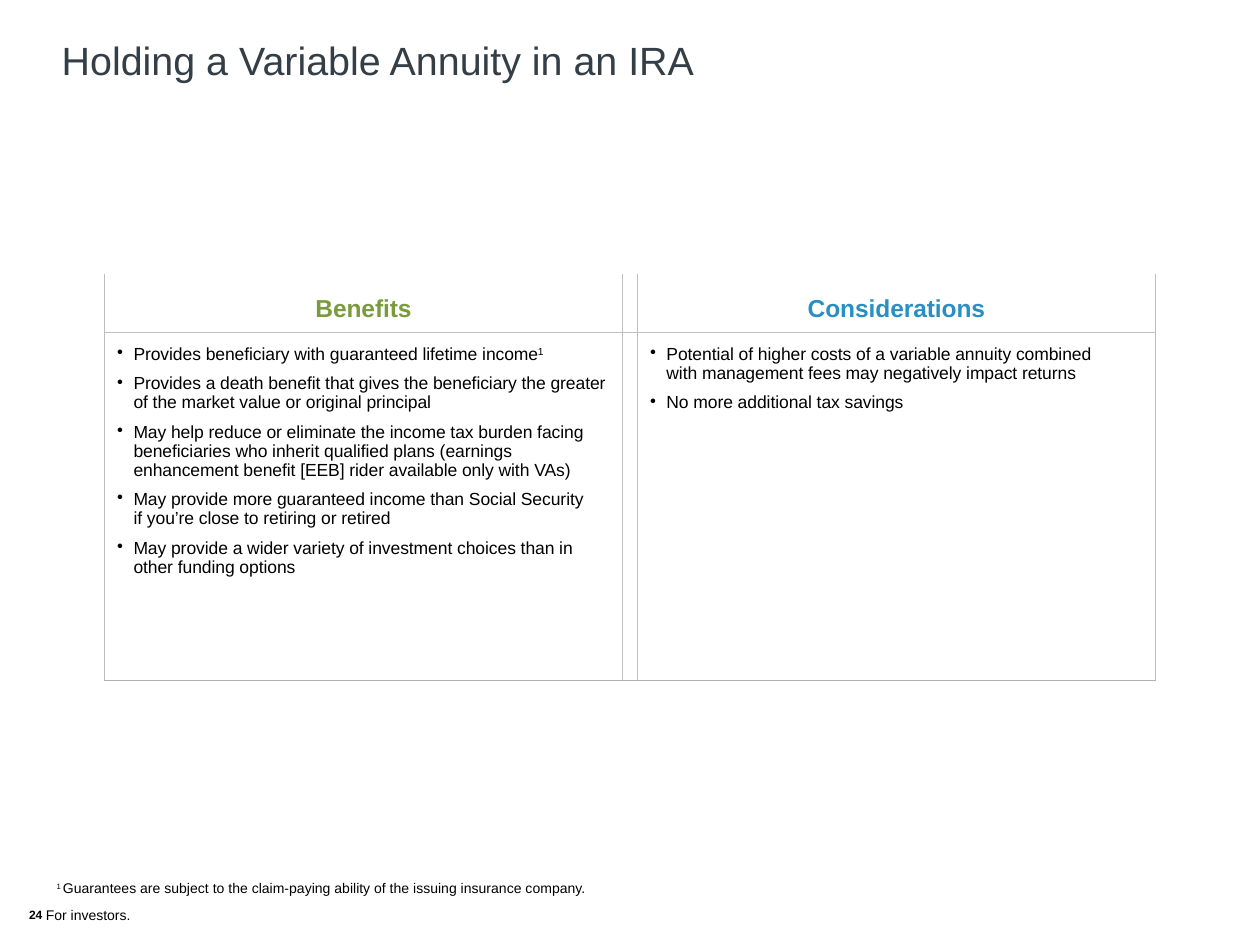
from dataclasses import dataclass

from lxml import etree
from pptx import Presentation
from pptx.dml.color import RGBColor
from pptx.enum.text import PP_ALIGN
from pptx.oxml.ns import qn
from pptx.util import Inches, Pt

CENTER = PP_ALIGN.CENTER
BLANK_LAYOUT = 6


@dataclass(frozen=True)
class Theme:
    font: str = "Arial"
    title: str = "333E47"
    text: str = "000000"
    benefits: str = "799B3C"
    considerations: str = "298FC2"
    rule: str = "BEBEBE"
    bottom_rule: str = "ADB1B6"
    title_size: float = 22.5
    heading_size: float = 14
    body_size: float = 10
    number_size: float = 12
    note_size: float = 8
    mark_size: float = 7.5


@dataclass(frozen=True)
class Topic:
    heading: str
    color: str
    points: tuple[str, ...]
    mark: str = ""  # footnote mark after the first point


THEME = Theme()

# Line breaks inside a point are written as \n
TOPICS = (
    Topic("Benefits", THEME.benefits, (
        "Provides beneficiary with guaranteed lifetime income",
        "Provides a death benefit that gives the beneficiary the greater\n"
        "of the market value or original principal",
        "May help reduce or eliminate the income tax burden facing\n"
        "beneficiaries who inherit qualified plans (earnings\n"
        "enhancement benefit [EEB] rider available only with VAs)",
        "May provide more guaranteed income than Social Security\n"
        "if you’re close to retiring or retired",
        "May provide a wider variety of investment choices than in\n"
        "other funding options",
    ), mark="1"),
    Topic("Considerations", THEME.considerations, (
        "Potential of higher costs of a variable annuity combined\n"
        "with management fees may negatively impact returns",
        "No more additional tax savings",
    )),
)


def add_text(para, text: str, *, size: float, color: str = THEME.text, bold: bool = False,
             baseline: int = 0, tracking: int = 0) -> None:
    """Add text to a paragraph; baseline is in percent, tracking in 1/100 pt."""
    for index, line in enumerate(text.split("\n")):
        if index:
            para.add_line_break()
        span = para.add_run()
        span.text = line
        span.font.name = THEME.font
        span.font.size = Pt(size)
        span.font.bold = bold
        span.font.color.rgb = RGBColor.from_string(color)
        properties = span._r.get_or_add_rPr()
        if baseline:
            properties.set("baseline", str(baseline * 1000))
        if tracking:
            properties.set("spc", str(tracking))


def add_box(page, left: float, top: float, width: float, height: float,
            inset_top: float = 0.01, indent: float = 0.04):
    """Add a text box and return its first paragraph."""
    box = page.shapes.add_textbox(Inches(left), Inches(top), Inches(width), Inches(height))
    frame = box.text_frame
    frame.word_wrap = True
    frame.margin_left = frame.margin_right = frame.margin_bottom = 0
    frame.margin_top = Inches(inset_top)
    para = frame.paragraphs[0]
    para._p.get_or_add_pPr().set("marL", str(Inches(indent)))
    return para


def style_cell(cell, inset_top: float, borders: dict[str, str]) -> None:
    cell.margin_left = cell.margin_right = cell.margin_bottom = 0
    cell.margin_top = Inches(inset_top)
    properties = cell._tc.get_or_add_tcPr()
    for side, color in borders.items():
        line = etree.SubElement(properties, qn(f"a:ln{side}"), w=str(Pt(0.75)))
        fill = etree.SubElement(line, qn("a:solidFill"))
        etree.SubElement(fill, qn("a:srgbClr"), val=color)
    cell.fill.background()


def add_points(frame, topic: Topic) -> None:
    for index, point in enumerate(topic.points):
        para = frame.add_paragraph() if index else frame.paragraphs[0]
        para.line_spacing = 0.97
        if index:
            para.space_before = Pt(6)
        properties = para._p.get_or_add_pPr()
        properties.set("marL", str(Inches(0.23)))
        properties.set("indent", str(Inches(-0.13)))
        etree.SubElement(properties, qn("a:buChar"), char="•")
        add_text(para, point, size=THEME.body_size, tracking=-3)
        if topic.mark and index == 0:
            add_text(para, topic.mark, size=THEME.body_size, baseline=26)


def add_comparison(page) -> None:
    widths, heights = (4.11, 0.12, 4.11), (0.45, 2.76)
    table = page.shapes.add_table(len(heights), len(widths), Inches(0.83), Inches(2.18),
                                  Inches(sum(widths)), Inches(sum(heights))).table
    table.first_row = table.horz_banding = False
    for column, width in zip(table.columns, widths):
        column.width = Inches(width)
    for row, height in zip(table.rows, heights):
        row.height = Inches(height)

    # Rules around the cells
    heading_borders = dict.fromkeys("LRB", THEME.rule)
    body_borders = {**dict.fromkeys("LRT", THEME.rule), "B": THEME.bottom_rule}
    for column in range(len(widths)):
        style_cell(table.cell(0, column), 0.16, heading_borders)
        style_cell(table.cell(1, column), 0.1, body_borders)

    # Topics stand on either side of the narrow gap column
    for column, topic in zip((0, 2), TOPICS):
        heading = table.cell(0, column).text_frame.paragraphs[0]
        heading.alignment = CENTER
        add_text(heading, topic.heading, size=THEME.heading_size, color=topic.color,
                 bold=True, tracking=-5)
        add_points(table.cell(1, column).text_frame, topic)


def main() -> None:
    deck = Presentation()
    deck.slide_width, deck.slide_height = Inches(10), Inches(7.5)
    page = deck.slides.add_slide(deck.slide_layouts[BLANK_LAYOUT])

    # Title
    title = add_box(page, 0.48, 0.28, 8.88, 0.7, indent=0.01)
    add_text(title, "Holding a Variable Annuity in an IRA", size=THEME.title_size,
             color=THEME.title)

    # Page number and audience
    footer = add_box(page, 0.19, 6.97, 5.02, 0.32, inset_top=0.17)
    add_text(footer, "24 ", size=THEME.number_size, bold=True, baseline=3)
    add_text(footer, "For investors.", size=THEME.note_size, tracking=-2)

    add_comparison(page)

    # Footnote
    note = add_box(page, 0.41, 6.97, 4.33, 0.16)
    add_text(note, "1 ", size=THEME.mark_size, baseline=28)
    add_text(note, "Guarantees are subject to the claim-paying ability of the issuing "
                   "insurance company.", size=THEME.note_size)

    deck.save("out.pptx")


if __name__ == "__main__":
    main()
